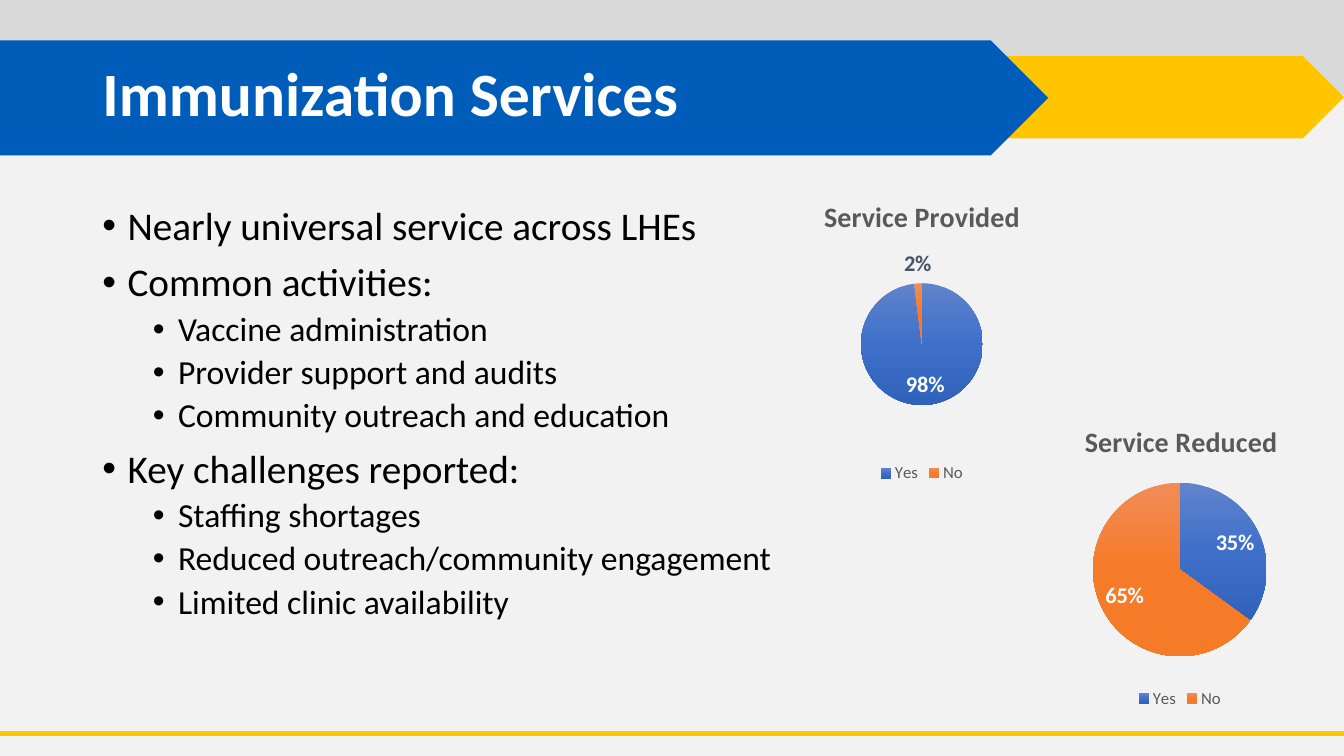
from copy import deepcopy

from lxml.etree import SubElement
from pptx import Presentation
from pptx.chart.data import CategoryChartData
from pptx.dml.color import RGBColor
from pptx.enum.chart import XL_CHART_TYPE as ChartType
from pptx.enum.chart import XL_LABEL_POSITION as LabelPosition
from pptx.enum.chart import XL_LEGEND_POSITION as LegendPosition
from pptx.enum.shapes import MSO_CONNECTOR as Connector
from pptx.enum.shapes import MSO_SHAPE as Shape
from pptx.enum.text import MSO_ANCHOR as Anchor
from pptx.enum.text import MSO_AUTO_SIZE as AutoSize
from pptx.enum.text import PP_ALIGN as Align
from pptx.oxml import parse_xml
from pptx.oxml.ns import nsdecls, qn
from pptx.util import Pt

FONT = "Calibri"
WIDTH, HEIGHT = 960, 540
YELLOW, BLUE, GRAY, TEXT_GRAY = "FFC600", "005CB9", "D9D9D9", "595959"
SLICE_GRADIENTS = [("6183CB", "3E70CA", "3062BB"), ("F18C57", "F67B28", "E56C19")]
TOPICS = [
    ("Nearly universal service across LHEs", []),
    ("Common activities:", [
        "Vaccine administration",
        "Provider support and audits",
        "Community outreach and education",
    ]),
    ("Key challenges reported:", [
        "Staffing shortages",
        "Reduced outreach/community engagement",
        "Limited clinic availability",
    ]),
]


def color(value):
    return RGBColor.from_string(value)


def format_font(font, size, fill="000000", bold=False):
    font.name = FONT
    font.size = Pt(size)
    font.bold = bold
    font.color.rgb = color(fill)


def write_text(paragraph, text, align=Align.LEFT, spacing=None, before=0, **font_format):
    paragraph.alignment = align
    paragraph.space_before = Pt(before)
    if spacing:
        paragraph.line_spacing = spacing
    run = paragraph.add_run()
    run.text = text
    format_font(run.font, **font_format)


def place(shape, left, top, width, height):
    shape.left, shape.top = Pt(left), Pt(top)
    shape.width, shape.height = Pt(width), Pt(height)


def add_banner(slide, left, top, width, height):
    bands = [
        (Shape.RECTANGLE, 0, 0, 1, 0.61, GRAY),
        (Shape.PENTAGON, 0.53, 0.36, 0.47, 0.53, YELLOW),
        (Shape.PENTAGON, 0, 0.26, 0.78, 0.74, BLUE),
    ]
    for kind, x, y, across, down, fill in bands:
        band = slide.shapes.add_shape(
            kind, Pt(left + x * width), Pt(top + y * height), Pt(across * width), Pt(down * height)
        )
        band.shadow.inherit = False
        band.fill.solid()
        band.fill.fore_color.rgb = color(fill)
        band.line.fill.background()


def add_footer_rule(slide, left, top, width):
    rule = slide.shapes.add_connector(
        Connector.STRAIGHT, Pt(left), Pt(top), Pt(left + width), Pt(top)
    )
    rule.line.color.rgb = color(YELLOW)
    rule.line.width = Pt(3)
    SubElement(rule._element.spPr, qn("a:effectLst"))


def fill_title(slide, text, left, top, width, height):
    title = slide.shapes.title
    place(title, left, top, width, height)
    slide.shapes._spTree.append(title._element)
    frame = title.text_frame
    frame.auto_size = AutoSize.NONE
    frame.vertical_anchor = Anchor.MIDDLE
    write_text(frame.paragraphs[0], text, spacing=0.9, size=44, fill="FFFFFF", bold=True)


def add_bullet(paragraph, level):
    paragraph.level = level
    properties = paragraph._p.get_or_add_pPr()
    properties.set("marL", str(Pt(18 + 36 * level)))
    properties.set("indent", str(Pt(-18)))
    SubElement(properties, qn("a:buFont")).set("typeface", "Arial")
    SubElement(properties, qn("a:buChar")).set("char", "•")


def fill_topics(slide, topics, left, top, width, height):
    body = slide.placeholders[1]
    place(body, left, top, width, height)
    slide.shapes._spTree.append(body._element)
    frame = body.text_frame
    frame.auto_size = AutoSize.NONE
    lines = []
    for topic, details in topics:
        lines += [(topic, 0)] + [(detail, 1) for detail in details]
    for index, (text, level) in enumerate(lines):
        paragraph = frame.add_paragraph() if index else frame.paragraphs[0]
        add_bullet(paragraph, level)
        before = (10, 5)[level] if index else 0
        write_text(paragraph, text, spacing=0.9, before=before, size=(28, 24)[level])


def set_layout(parent, index, **fractions):
    existing = parent.find(qn("c:layout"))
    if existing is not None:
        parent.remove(existing)
    layout = parse_xml(f"<c:layout {nsdecls('c')}><c:manualLayout/></c:layout>")
    settings = {"xMode": "edge", "yMode": "edge", **fractions}
    for name, value in settings.items():
        SubElement(layout[0], qn(f"c:{name}")).set("val", str(value))
    parent.insert(index, layout)


def fill_slice(point, stops):
    fill = point.format.fill
    fill.gradient()
    fill.gradient_angle = 270
    stop_list = next(point._element.iter(qn("a:gsLst"))) if hasattr(point, "_element") else None
    if stop_list is None:
        stop_list = fill._fill._gradFill.gsLst
    stop_list.append(deepcopy(stop_list[-1]))
    for index, (stop, value) in enumerate(zip(fill.gradient_stops, stops)):
        stop.position = index / 2
        stop.color.rgb = color(value)


def move_label_outside(point, fill):
    label = point.data_label
    format_font(label.font, size=16, fill=fill, bold=True)
    label.position = LabelPosition.OUTSIDE_END
    element = label._dLbl
    element.find(qn("c:showVal")).set("val", "0")
    element.find(qn("c:showPercent")).set("val", "1")


def add_pie(slide, heading, values, diameter, left, top, width, height):
    data = CategoryChartData()
    data.categories = ["Yes", "No"]
    data.add_series("Series 1", values)
    chart = slide.shapes.add_chart(
        ChartType.PIE, Pt(left), Pt(top), Pt(width), Pt(height), data
    ).chart
    format_font(chart.font, size=10)
    chart.has_title = True
    title = chart.chart_title
    write_text(title.text_frame.paragraphs[0], heading, align=Align.CENTER,
               size=20, fill=TEXT_GRAY, bold=True)
    set_layout(title._element, 1, x=0.26, y=0.07)
    chart.has_legend = True
    chart.legend.position = LegendPosition.BOTTOM
    chart.legend.include_in_layout = False
    format_font(chart.legend.font, size=12, fill=TEXT_GRAY)
    plot = chart.plots[0]
    plot.vary_by_categories = True
    across, down = diameter / width, diameter / height
    set_layout(plot._element.getparent(), 0, layoutTarget="inner",
               x=0.5 - across / 2, y=0.55 - down / 2, w=across, h=down)
    layout = plot._element.getparent()[0][0]
    layout.insert(0, layout.find(qn("c:layoutTarget")))
    series = plot.series[0]
    for index, stops in enumerate(SLICE_GRADIENTS):
        fill_slice(series.points[index], stops)
    labels = series.data_labels
    labels.show_percentage = True
    labels.show_value = False
    labels.number_format = "0%"
    labels.number_format_is_linked = False
    labels.position = LabelPosition.BEST_FIT
    format_font(labels.font, size=16, fill="FFFFFF", bold=True)
    return series


def build_services_slide(presentation):
    slide = presentation.slides.add_slide(presentation.slide_layouts[1])
    slide.background.fill.solid()
    slide.background.fill.fore_color.rgb = color("F2F2F2")
    add_banner(slide, 0, 0, WIDTH, 111)
    add_footer_rule(slide, 0, 524, WIDTH)
    fill_title(slide, "Immunization Services", 66, 16.5, 828, 104.5)
    fill_topics(slide, TOPICS, 66, 144, 828, 343)
    provided = add_pie(slide, "Service Provided", (98, 2), 87, 505.5, 121, 306, 227)
    move_label_outside(provided.points[1], "44546A")
    add_pie(slide, "Service Reduced", (35, 65), 124, 694, 282, 297.5, 227)


def main():
    presentation = Presentation()
    presentation.slide_width, presentation.slide_height = Pt(WIDTH), Pt(HEIGHT)
    build_services_slide(presentation)
    presentation.save("out.pptx")


if __name__ == "__main__":
    main()
